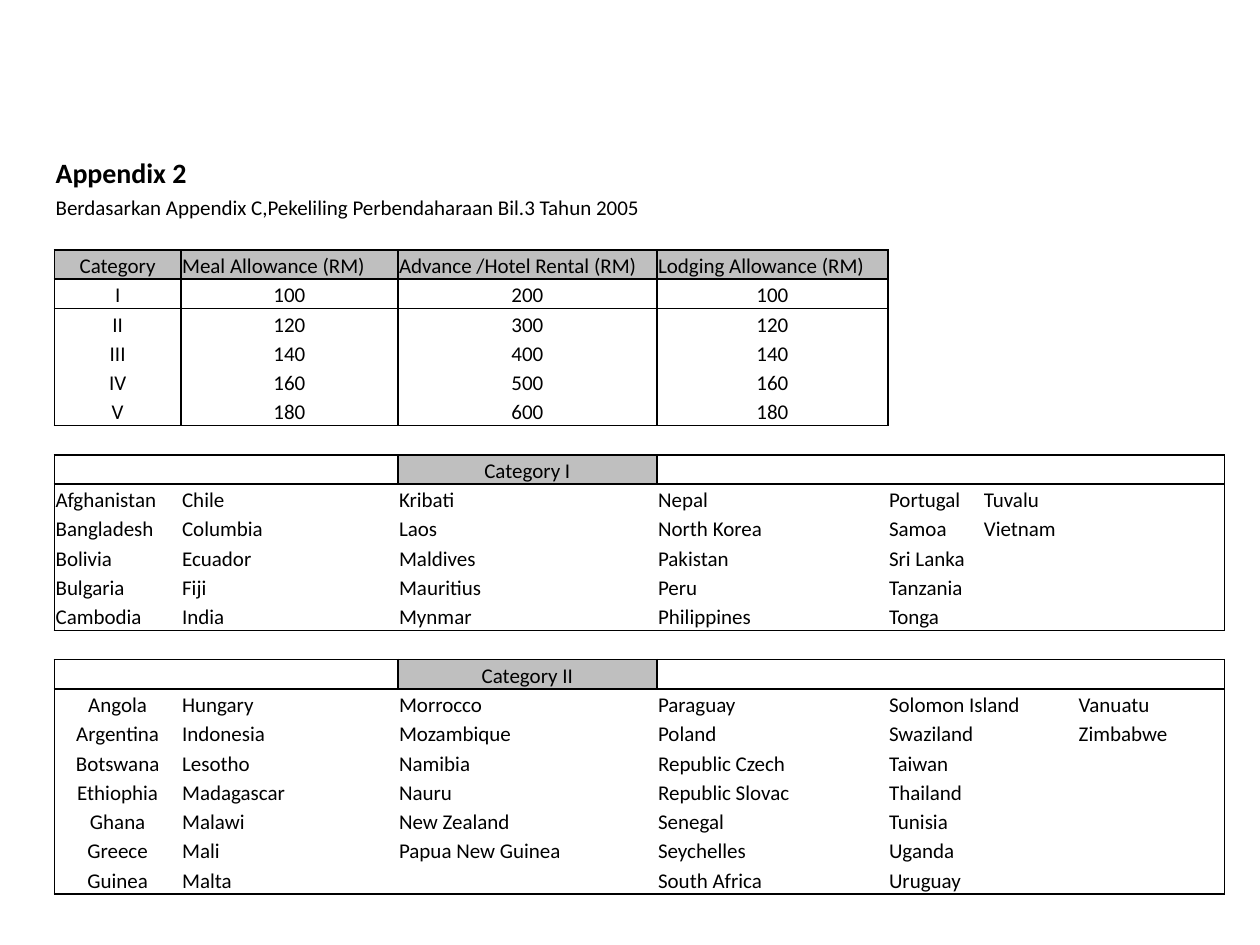
from collections import defaultdict

from lxml.etree import SubElement
from pptx import Presentation
from pptx.dml.color import RGBColor
from pptx.enum.text import MSO_ANCHOR as Anchor, PP_ALIGN as Align
from pptx.oxml.ns import qn
from pptx.util import Pt

BLACK = RGBColor(0x00, 0x00, 0x00)
GREY = RGBColor(0xBF, 0xBF, 0xBF)
FONT = "Calibri"
NO_STYLE = "{2D5ABB26-0587-4C30-8999-92F81FD0307C}"

LEFT, TOP = 31.1, 87.8
COL_WIDTHS = [72.3, 6.5, 117.5, 148, 132, 54.2, 54.2, 84]
TITLE_HEIGHT, ROW_HEIGHT, ROW_COUNT = 21.6, 16.73, 25
LAST_COL = len(COL_WIDTHS) - 1
TEXT_COLS = [0, 1, 3, 4, 5, 6]
HEADER_ROW, CATEGORY_1_ROW, CATEGORY_2_ROW = 3, 10, 17

HEADERS = ["Category", "Meal Allowance (RM)", "Advance /Hotel Rental (RM)", "Lodging Allowance (RM)"]
ALLOWANCES = [
    ["I", "100", "200", "100"],
    ["II", "120", "300", "120"],
    ["III", "140", "400", "140"],
    ["IV", "160", "500", "160"],
    ["V", "180", "600", "180"],
]
CATEGORY_1 = [
    ["Afghanistan", "Chile", "Kribati", "Nepal", "Portugal", "Tuvalu"],
    ["Bangladesh", "Columbia", "Laos", "North Korea", "Samoa", "Vietnam"],
    ["Bolivia", "Ecuador", "Maldives", "Pakistan", "Sri Lanka"],
    ["Bulgaria", "Fiji", "Mauritius", "Peru", "Tanzania"],
    ["Cambodia", "India", "Mynmar", "Philippines", "Tonga"],
]
CATEGORY_2 = [
    ["Angola", "Hungary", "Morrocco", "Paraguay", "Solomon Island", "Vanuatu"],
    ["Argentina", "Indonesia", "Mozambique", "Poland", "Swaziland", "Zimbabwe"],
    ["Botswana", "Lesotho", "Namibia", "Republic Czech", "Taiwan"],
    ["Ethiophia", "Madagascar", "Nauru", "Republic Slovac", "Thailand"],
    ["Ghana", "Malawi", "New Zealand", "Senegal", "Tunisia"],
    ["Greece", "Mali", "Papua New Guinea", "Seychelles", "Uganda"],
    ["Guinea", "Malta", "", "South Africa", "Uruguay"],
]


def add_grid(slide):
    frame = slide.shapes.add_table(
        ROW_COUNT, len(COL_WIDTHS), Pt(LEFT), Pt(TOP), Pt(sum(COL_WIDTHS)),
        Pt(TITLE_HEIGHT + ROW_HEIGHT * (ROW_COUNT - 1)))
    table = frame.table
    table.first_row = table.horz_banding = False
    table._tbl.tblPr.find(qn("a:tableStyleId")).text = NO_STYLE
    for col, width in zip(table.columns, COL_WIDTHS):
        col.width = Pt(width)
    for i, row in enumerate(table.rows):
        row.height = Pt(ROW_HEIGHT if i else TITLE_HEIGHT)
    for cell in table.iter_cells():
        cell.margin_left = cell.margin_right = cell.margin_top = Pt(0.7)
        cell.margin_bottom = 0
        cell.vertical_anchor = Anchor.BOTTOM
        SubElement(cell.text_frame.paragraphs[0]._p, qn("a:endParaRPr"), sz="1200")
    return table


def merge_cells(table):
    spans = [(0, 0, 1), (1, 0, 3)]
    spans += [(row, 1, 2) for row in range(2, ROW_COUNT)]
    spans += [(CATEGORY_2_ROW + i, 5, 6) for i in (1, 2)]
    for row, first, last in spans:
        table.cell(row, first).merge(table.cell(row, last))


def write(cell, text, align=Align.LEFT, size=12, bold=False):
    p = cell.text_frame.paragraphs[0]
    p.add_run().text = text
    p.alignment = align
    p.font.name = FONT
    p.font.size = Pt(size)
    p.font.bold = bold
    p.font.color.rgb = BLACK


def write_row(table, row, texts, first_align=Align.LEFT, align=Align.LEFT):
    for col, text in zip(TEXT_COLS, texts):
        cell = table.cell(row, col)
        if cell.is_spanned:
            cell = table.cell(row, col + 1)
        if text:
            write(cell, text, align if col else first_align)


def frame_block(edges, top, left, bottom, right):
    for row in range(top, bottom + 1):
        edges[row, left].add("L")
        edges[row, right].add("R")
    for col in range(left, right + 1):
        edges[top, col].add("T")
        edges[bottom, col].add("B")


def add_allowances(table, edges):
    write_row(table, HEADER_ROW, HEADERS, Align.CENTER)
    for i, texts in enumerate(ALLOWANCES, HEADER_ROW + 1):
        write_row(table, i, texts, Align.CENTER, Align.CENTER)
    last_row = HEADER_ROW + len(ALLOWANCES)
    for left, right in [(0, 0), (1, 2), (3, 3), (4, 4)]:
        frame_block(edges, HEADER_ROW, left, HEADER_ROW, right)
        frame_block(edges, HEADER_ROW + 1, left, last_row, right)


def add_category(table, edges, row, title, countries, first_align):
    write(table.cell(row, 3), title, Align.CENTER)
    for i, texts in enumerate(countries, row + 1):
        write_row(table, i, texts, first_align)
    frame_block(edges, row, 0, row + len(countries), LAST_COL)
    frame_block(edges, row, 3, row, 3)


def draw_edges(table, edges):
    for (row, col), sides in edges.items():
        tc_pr = table.cell(row, col)._tc.get_or_add_tcPr()
        for side in "LRTB":
            if side in sides:
                ln = SubElement(tc_pr, qn(f"a:ln{side}"), w=str(Pt(1)))
                fill = SubElement(ln, qn("a:solidFill"))
                SubElement(fill, qn("a:srgbClr"), val=str(BLACK))


def fill_cells(table):
    shaded = {(HEADER_ROW, col) for col in range(5)}
    shaded |= {(CATEGORY_1_ROW, 3), (CATEGORY_2_ROW, 3)}
    for row in range(ROW_COUNT):
        for col in range(len(COL_WIDTHS)):
            fill = table.cell(row, col).fill
            if (row, col) in shaded:
                fill.solid()
                fill.fore_color.rgb = GREY
            else:
                fill.background()


def main():
    prs = Presentation()
    prs.slide_width, prs.slide_height = Pt(720), Pt(540)
    slide = prs.slides.add_slide(prs.slide_layouts[6])
    table = add_grid(slide)
    merge_cells(table)
    edges = defaultdict(set)
    write(table.cell(0, 0), "Appendix 2", size=16, bold=True)
    write(table.cell(1, 0), "Berdasarkan Appendix C,Pekeliling Perbendaharaan Bil.3 Tahun 2005")
    add_allowances(table, edges)
    add_category(table, edges, CATEGORY_1_ROW, "Category I", CATEGORY_1, Align.LEFT)
    add_category(table, edges, CATEGORY_2_ROW, "Category II", CATEGORY_2, Align.CENTER)
    draw_edges(table, edges)
    fill_cells(table)
    prs.save("out.pptx")


if __name__ == "__main__":
    main()
